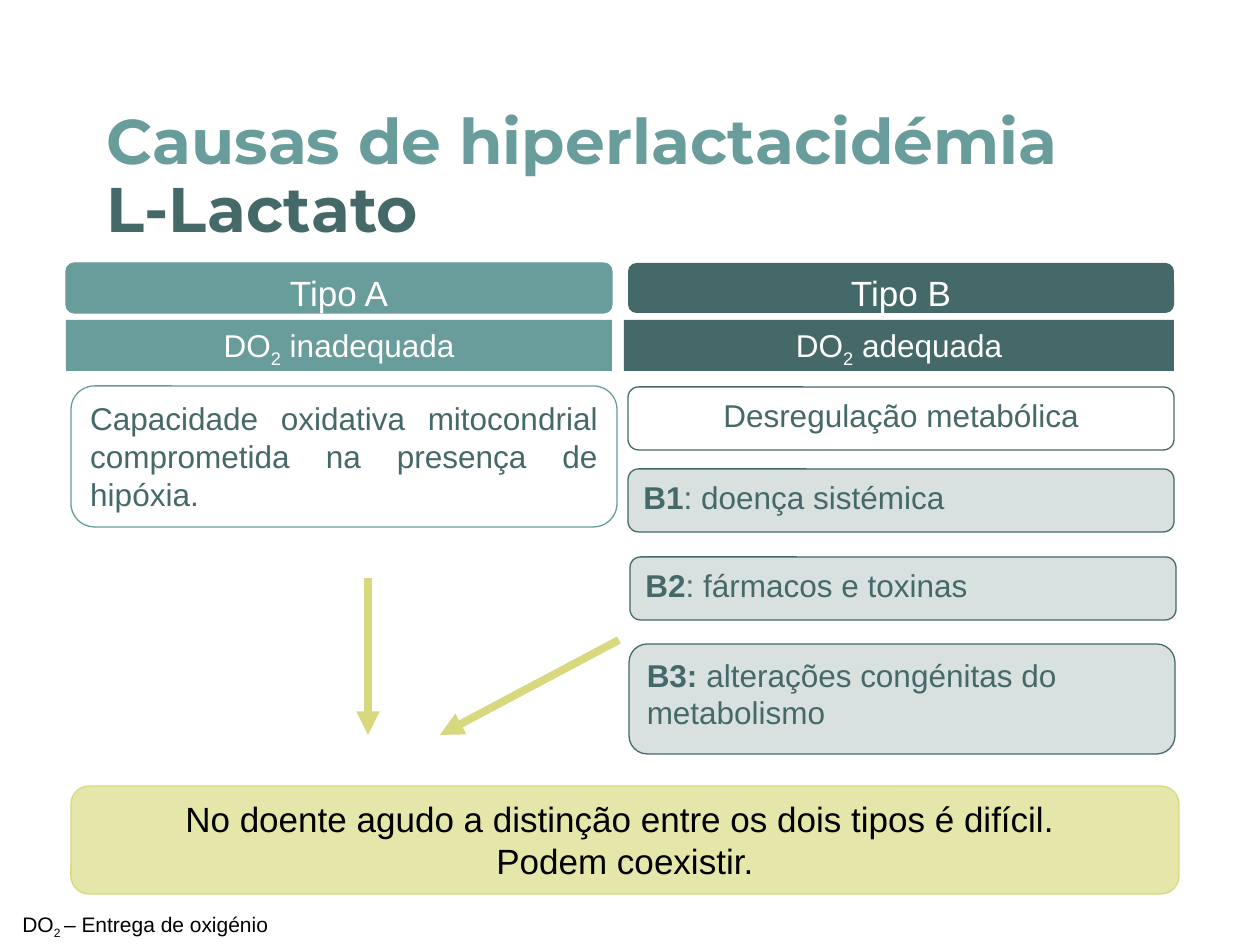
"""Build the slide on the causes of L-lactate hyperlactacidaemia."""
from dataclasses import dataclass
from typing import Optional

import pptx
import pptx.dml.color
import pptx.enum.shapes
import pptx.enum.text
import pptx.oxml
import pptx.oxml.ns
import pptx.util
from lxml import etree

EMU_PER_PX = 914400 / 126
TEAL, DARK, LIME, PALE = "689D9B", "456968", "D8D97F", "E5E6A9"
WHITE, BLACK = "FFFFFF", "000000"
ROUND = pptx.enum.shapes.MSO_SHAPE.ROUNDED_RECTANGLE
RECT = pptx.enum.shapes.MSO_SHAPE.RECTANGLE
ALIGN = pptx.enum.text.PP_ALIGN


@dataclass(frozen=True)
class Run:
    text: str
    bold: bool = False
    subscript: bool = False


@dataclass(frozen=True)
class Box:
    left: int
    top: int
    width: int
    height: int
    paragraphs: tuple[tuple[Run, ...], ...]
    size: int = 18
    color: str = DARK
    align: ALIGN = ALIGN.CENTER
    preset: Optional[pptx.enum.shapes.MSO_SHAPE] = ROUND
    fill: Optional[str] = None
    opacity: int = 100
    line: Optional[str] = None


@dataclass(frozen=True)
class Arrow:
    start: tuple[int, int]
    end: tuple[int, int]


def px(length: int) -> int:
    """Turn pixels into EMU."""
    return round(length * EMU_PER_PX)


def rgb(color: str) -> pptx.dml.color.RGBColor:
    """Turn a hex string into a colour."""
    return pptx.dml.color.RGBColor.from_string(color)


def add_run(paragraph, text: str, *, size: int, color: str, font: str = "Arial",
            bold: bool = False, subscript: bool = False) -> None:
    """Append formatted text to a paragraph."""
    run = paragraph.add_run()
    run.text = text
    run.font.name = font
    run.font.size = pptx.util.Pt(size)
    run.font.bold = bold
    run.font.color.rgb = rgb(color)
    if subscript:
        run.font._element.set("baseline", "-25000")


def paint(shape, box: Box) -> None:
    """Set the fill, outline and shadow of a preset shape."""
    shape.shadow.inherit = False
    if box.fill:
        shape.fill.solid()
        shape.fill.fore_color.rgb = rgb(box.fill)
    else:
        shape.fill.background()
    if box.opacity < 100:
        fill_color = shape._element.spPr.find(".//" + pptx.oxml.ns.qn("a:srgbClr"))
        etree.SubElement(fill_color, pptx.oxml.ns.qn("a:alpha"), val=str(box.opacity * 1000))
    if box.line:
        shape.line.color.rgb = rgb(box.line)
        shape.line.width = pptx.util.Pt(0.75)
    else:
        shape.line.fill.background()


def add_box(slide, box: Box) -> None:
    """Draw a box, or a plain text box if it has no preset."""
    frame = [px(length) for length in (box.left, box.top, box.width, box.height)]
    if box.preset is None:
        shape = slide.shapes.add_textbox(*frame)
    else:
        shape = slide.shapes.add_shape(box.preset, *frame)
        paint(shape, box)
    body = shape.text_frame
    body.word_wrap = True
    body.vertical_anchor = pptx.enum.text.MSO_ANCHOR.TOP
    for index, runs in enumerate(box.paragraphs):
        paragraph = body.add_paragraph() if index else body.paragraphs[0]
        paragraph.alignment = box.align
        for run in runs:
            add_run(paragraph, run.text, size=box.size, color=box.color,
                    bold=run.bold, subscript=run.subscript)


def add_arrow(slide, arrow: Arrow) -> None:
    """Draw a thick arrow with a triangular head."""
    connector = slide.shapes.add_connector(
        pptx.enum.shapes.MSO_CONNECTOR.STRAIGHT,
        *(px(length) for length in arrow.start + arrow.end))
    connector.line.color.rgb = rgb(LIME)
    connector.line.width = pptx.util.Pt(4.5)
    outline = connector.line._get_or_add_ln()
    etree.SubElement(outline, pptx.oxml.ns.qn("a:tailEnd"), type="triangle")
    etree.SubElement(connector._element.spPr, pptx.oxml.ns.qn("a:effectLst"))


def add_title(slide) -> None:
    """Fill the title placeholder with its two colours."""
    title = slide.shapes.title
    title.left, title.top, title.width, title.height = map(px, (94, 67, 1071, 222))
    title.text_frame.auto_size = pptx.enum.text.MSO_AUTO_SIZE.NONE
    title.text_frame.vertical_anchor = pptx.enum.text.MSO_ANCHOR.MIDDLE
    paragraph = title.text_frame.paragraphs[0]
    paragraph.alignment = ALIGN.LEFT
    paragraph.line_spacing = 0.9
    style = {"size": 36, "font": "Montserrat", "bold": True}
    add_run(paragraph, "Causas de hiperlactacidémia", color=TEAL, **style)
    paragraph.add_line_break()
    add_run(paragraph, "L-Lactato", color=DARK, **style)


def oxygen(rest: str, gap: str = "") -> tuple[tuple[Run, ...], ...]:
    """Give one paragraph that starts with the DO2 symbol."""
    return ((Run("DO"), Run("2" + gap, subscript=True), Run(rest)),)


def subtype(left: int, top: int, height: int, label: str, cause: str) -> Box:
    """Describe one tinted type B subtype."""
    return Box(left, top, 546, height, ((Run(label, bold=True), Run(cause)),),
               align=ALIGN.LEFT, fill=DARK, opacity=20, line=DARK)


BOXES = (
    Box(66, 263, 546, 50, ((Run("Tipo A"),),), size=20, color=WHITE, fill=TEAL, line=TEAL),
    Box(71, 386, 546, 141,
        ((Run("Capacidade oxidativa mitocondrial comprometida na presença de hipóxia."),),),
        align=ALIGN.JUSTIFY, line=TEAL),
    Box(628, 263, 546, 50, ((Run("Tipo B"),),), size=20, color=WHITE, fill=DARK),
    Box(628, 387, 546, 63, ((Run("Desregulação metabólica"),),), line=DARK),
    subtype(628, 469, 63, "B1", ": doença sistémica"),
    subtype(630, 557, 63, "B2", ": fármacos e toxinas"),
    subtype(629, 644, 110, "B3: ", "alterações congénitas do metabolismo"),
    Box(71, 786, 1108, 108,
        ((Run("No doente agudo a distinção entre os dois tipos é difícil. "),),
         (Run("Podem coexistir."),)),
        size=20, color=BLACK, fill=PALE, line=LIME),
    Box(66, 320, 546, 51, oxygen(" inadequada"), color=WHITE, preset=RECT, fill=TEAL),
    Box(624, 320, 550, 51, oxygen(" adequada"), color=WHITE, preset=RECT, fill=DARK),
    Box(10, 905, 630, 38, oxygen("– Entrega de oxigénio", gap=" "), size=12, color=BLACK,
        align=ALIGN.LEFT, preset=None),
)
ARROWS = (Arrow((368, 578), (368, 735)), Arrow((619, 640), (440, 735)))


def main() -> None:
    """Build and save the slide."""
    deck = pptx.Presentation()
    deck.slide_width, deck.slide_height = px(1260), px(945)
    slide = deck.slides.add_slide(deck.slide_layouts[5])
    add_title(slide)
    for box in BOXES:
        add_box(slide, box)
    for arrow in ARROWS:
        add_arrow(slide, arrow)
    deck.save("out.pptx")


if __name__ == "__main__":
    main()
